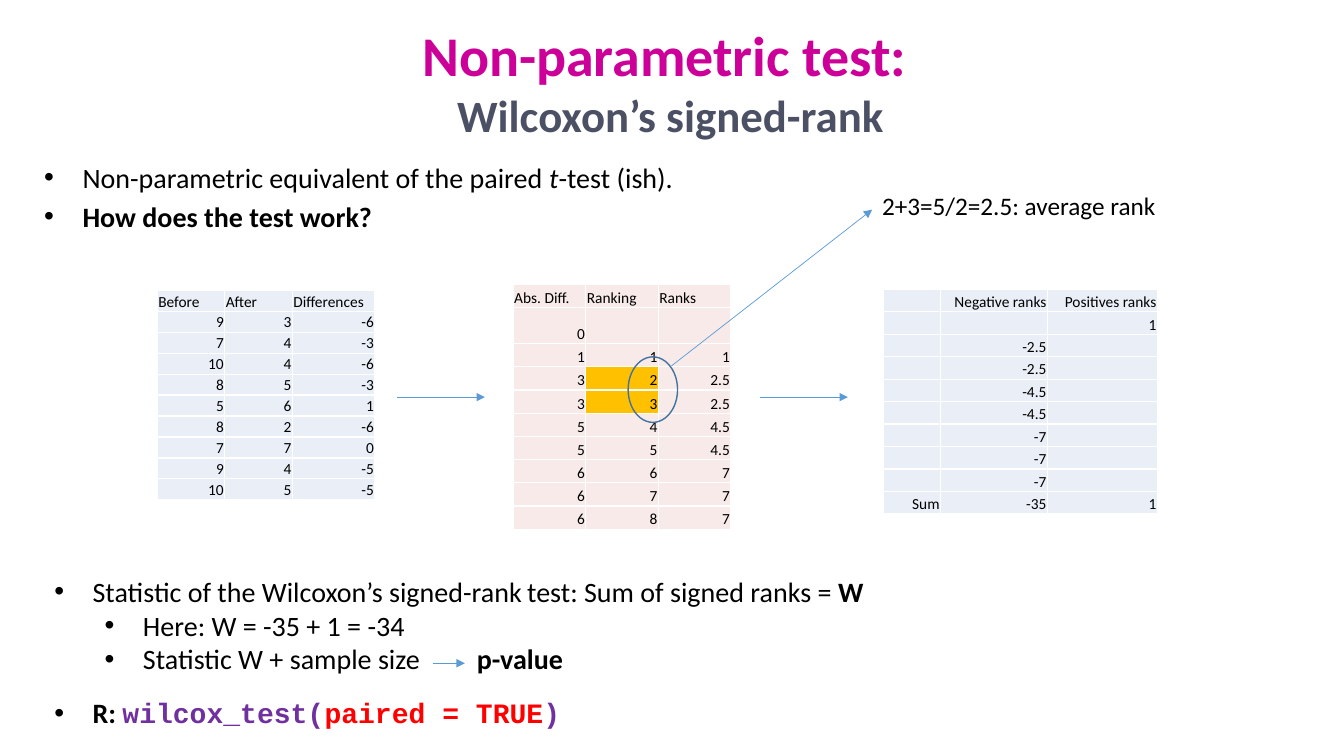
from dataclasses import dataclass, field

import pptx
import pptx.dml.color
import pptx.enum.shapes
import pptx.enum.text
import pptx.oxml.ns
import pptx.util
from lxml import etree

Inches = pptx.util.Inches
Pt = pptx.util.Pt
qn = pptx.oxml.ns.qn
Align = pptx.enum.text.PP_ALIGN
AutoSize = pptx.enum.text.MSO_AUTO_SIZE

BLACK, WHITE = "000000", "FFFFFF"
PINK, SLATE, PURPLE, RED = "CC0099", "4B5064", "7030A0", "FF0000"
PALE_BLUE, PALE_RED, GOLD = "EAEFF7", "F7EAE9", "FFC000"
ARROW_BLUE, RING_BLUE = "5B9BD5", "43739E"
TABLE_SIZE = 11


@dataclass
class RankTable:
    left: float
    top: float
    columns: list[float]
    row_heights: list[float]
    rows: list[list[str]]
    fill: str
    header_align: Align = Align.LEFT
    highlights: set[tuple[int, int]] = field(default_factory=set)


@dataclass
class Arrow:
    start: tuple[float, float]
    end: tuple[float, float]


def colour(value: str) -> pptx.dml.color.RGBColor:
    return pptx.dml.color.RGBColor.from_string(value)


def add_text(paragraph, text: str, *, size: float = 20, color: str = BLACK, bold: bool = False,
             italic: bool = False, font: str = "Calibri", spacing: float = 0) -> None:
    run = paragraph.add_run()
    run.text = text
    run.font.size = Pt(size)
    run.font.name = font
    run.font.bold = bold
    run.font.italic = italic
    run.font.color.rgb = colour(color)
    if spacing:
        run.font._element.set("spc", str(int(spacing * 100)))


def add_bullet(frame, *, level: int = 0, before: float = 0):
    """Return a bulleted paragraph, using the frame's first one while it is empty."""
    first = frame.paragraphs[0]
    paragraph = frame.add_paragraph() if first.runs else first
    paragraph.level = level
    paragraph.space_before = Pt(before)
    properties = paragraph._p.get_or_add_pPr()
    properties.set("marL", str(Inches(0.38 + 0.5 * level)))
    properties.set("indent", str(Inches(-0.38)))
    etree.SubElement(properties, qn("a:buFont"), typeface="Arial")
    etree.SubElement(properties, qn("a:buChar"), char="•")
    return paragraph


def add_text_frame(slide, left: float, top: float, width: float, height: float, *,
                   wrap: bool = True, auto_size: AutoSize = AutoSize.NONE):
    shape = slide.shapes.add_textbox(Inches(left), Inches(top), Inches(width), Inches(height))
    shape.text_frame.word_wrap = wrap
    shape.text_frame.auto_size = auto_size
    return shape.text_frame


def add_arrow(slide, arrow: Arrow) -> None:
    ends = [Inches(value) for value in arrow.start + arrow.end]
    connector = slide.shapes.add_connector(pptx.enum.shapes.MSO_CONNECTOR.STRAIGHT, *ends)
    connector.line.color.rgb = colour(ARROW_BLUE)
    connector.line.width = Pt(0.5)
    etree.SubElement(connector.line._get_or_add_ln(), qn("a:tailEnd"), type="triangle")
    etree.SubElement(connector._element.spPr, qn("a:effectLst"))


def set_borders(cell) -> None:
    properties = cell._tc.get_or_add_tcPr()
    for index, side in enumerate(("lnL", "lnR", "lnT", "lnB")):
        line = etree.Element(qn(f"a:{side}"), w=str(Pt(1)))
        fill = etree.SubElement(line, qn("a:solidFill"))
        etree.SubElement(fill, qn("a:srgbClr"), val=WHITE)
        properties.insert(index, line)


def add_rank_table(slide, spec: RankTable) -> None:
    frame = slide.shapes.add_table(
        len(spec.rows), len(spec.columns), Inches(spec.left), Inches(spec.top),
        Inches(sum(spec.columns)), Inches(sum(spec.row_heights)))
    table = frame.table
    table.first_row = table.horz_banding = False
    for column, width in zip(table.columns, spec.columns):
        column.width = Inches(width)
    for row_index, (values, height) in enumerate(zip(spec.rows, spec.row_heights)):
        table.rows[row_index].height = Inches(height)
        for column_index, value in enumerate(values):
            cell = table.cell(row_index, column_index)
            cell.margin_left = cell.margin_right = cell.margin_top = Inches(0.01)
            cell.margin_bottom = 0
            cell.vertical_anchor = pptx.enum.text.MSO_ANCHOR.BOTTOM
            cell.fill.solid()
            highlighted = (row_index, column_index) in spec.highlights
            cell.fill.fore_color.rgb = colour(GOLD if highlighted else spec.fill)
            set_borders(cell)
            paragraph = cell.text_frame.paragraphs[0]
            paragraph.alignment = Align.RIGHT if row_index else spec.header_align
            if value:
                add_text(paragraph, value, size=TABLE_SIZE)
            else:
                etree.SubElement(paragraph._p, qn("a:endParaRPr"), sz=str(TABLE_SIZE * 100))


def add_title(slide) -> None:
    title = slide.shapes.title
    title.left, title.top = Inches(1.83), Inches(0.13)
    title.width, title.height = Inches(9.64), Inches(1.34)
    frame = title.text_frame
    frame.word_wrap = True
    frame.auto_size = AutoSize.NONE
    heading, subheading = frame.paragraphs[0], frame.add_paragraph()
    heading.alignment = subheading.alignment = Align.CENTER
    add_text(heading, "Non-parametric test: ", size=40, color=PINK, bold=True)
    add_text(subheading, "Wilcoxon’s signed-rank", size=32, color=SLATE, bold=True)


def add_introduction(slide) -> None:
    frame = add_text_frame(slide, 0.34, 1.54, 9.69, 0.66)
    equivalent = add_bullet(frame, before=4)
    add_text(equivalent, "Non-parametric equivalent of the paired ")
    add_text(equivalent, "t", italic=True)
    add_text(equivalent, "-test (ish).")
    add_text(add_bullet(frame, before=4), "How does the test work?", bold=True)


def add_conclusion(slide) -> None:
    frame = add_text_frame(slide, 0.44, 5.65, 9.36, 1.65, auto_size=AutoSize.SHAPE_TO_FIT_TEXT)
    statistic = add_bullet(frame)
    add_text(statistic, "Statistic of the Wilcoxon’s signed-rank")
    add_text(statistic, " ", size=16, color=PINK)
    add_text(statistic, "test: Sum of signed ranks = ")
    add_text(statistic, "W", bold=True)
    add_text(add_bullet(frame, level=1), "Here: W = -35 + 1 = -34")
    p_value = add_bullet(frame, level=1)
    add_text(p_value, "Statistic W + sample size")
    add_text(p_value, " ", spacing=36)  # room for the small arrow
    add_text(p_value, "p-value", bold=True)
    code = add_bullet(frame, before=14.6)
    add_text(code, "R: ", bold=True)
    for text, color in (("wilcox_test(", PURPLE), ("paired = TRUE", RED), (")", PURPLE)):
        add_text(code, text, color=color, bold=True, font="Courier New")


# Table data
BEFORE = [9, 7, 10, 8, 5, 8, 7, 9, 10]
AFTER = [3, 4, 4, 5, 6, 2, 7, 4, 5]
DIFFERENCES = RankTable(
    1.56, 2.88, [0.67, 0.67, 0.82], [0.208] * 10,
    [["Before", "After", "Differences"]]
    + [[str(before), str(after), str(after - before)] for before, after in zip(BEFORE, AFTER)],
    PALE_BLUE)

ABSOLUTE = [1, 3, 3, 5, 5, 6, 6, 6]
RANKS = ["1", "2.5", "2.5", "4.5", "4.5", "7", "7", "7"]
RANKING = RankTable(
    5.09, 2.82, [0.72] * 3, [0.23, 0.36] + [0.23] * 8,
    [["Abs. Diff.", "Ranking", "Ranks"], ["0", "", ""]]
    + [[str(value), str(place), rank]
       for place, (value, rank) in enumerate(zip(ABSOLUTE, RANKS), start=1)],
    PALE_RED, highlights={(3, 1), (4, 1)})

SIGNED_RANKS = RankTable(
    8.76, 2.87, [0.57, 1.06, 1.09], [0.223] * 10,
    [["", "Negative ranks", "Positives ranks"], ["", "", "1"]]
    + [["", f"-{rank}", ""] for rank in RANKS[1:]]
    + [["Sum", "-35", "1"]],
    PALE_BLUE, header_align=Align.RIGHT)

ARROWS = [
    Arrow((3.94, 3.94), (4.81, 3.94)),
    Arrow((7.54, 3.94), (8.41, 3.94)),
    Arrow((4.29, 6.58), (4.61, 6.58)),
    Arrow((6.66, 3.63), (8.65, 2.08)),
]


def main() -> None:
    presentation = pptx.Presentation()
    presentation.slide_width, presentation.slide_height = Inches(13.33), Inches(7.5)
    slide = presentation.slides.add_slide(presentation.slide_layouts[5])

    # Text
    add_title(slide)
    add_introduction(slide)
    add_conclusion(slide)

    # Tables
    for spec in (DIFFERENCES, RANKING, SIGNED_RANKS):
        add_rank_table(slide, spec)

    # Ring around the tied ranks, arrows and note
    ring = slide.shapes.add_shape(pptx.enum.shapes.MSO_SHAPE.OVAL, Inches(6.23), Inches(3.54),
                                  Inches(0.49), Inches(0.65))
    ring.shadow.inherit = False
    ring.fill.background()
    ring.line.color.rgb = colour(RING_BLUE)
    ring.line.width = Pt(1)
    for arrow in ARROWS:
        add_arrow(slide, arrow)
    note = add_text_frame(slide, 8.65, 1.84, 2.95, 0.4, wrap=False,
                          auto_size=AutoSize.SHAPE_TO_FIT_TEXT)
    add_text(note.paragraphs[0], "2+3=5/2=2.5: average rank", size=18)

    presentation.save("out.pptx")


if __name__ == "__main__":
    main()
